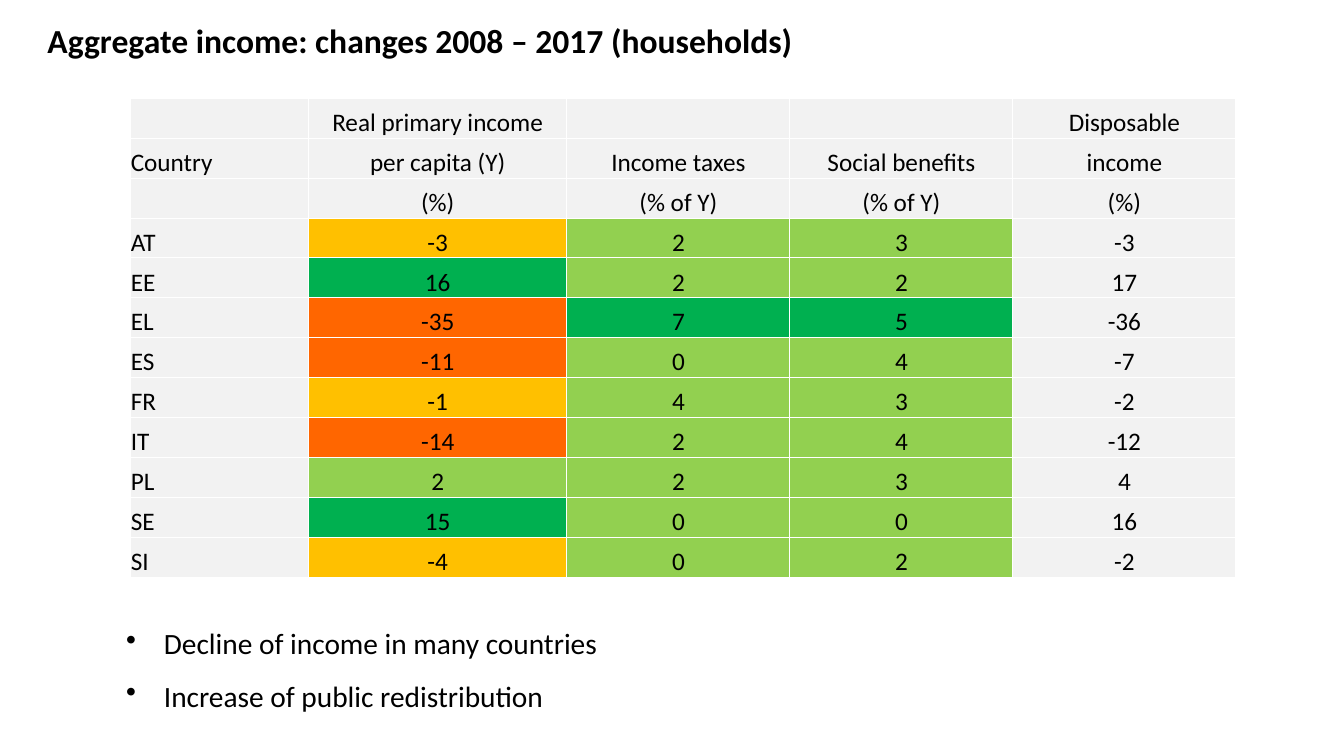
from lxml import etree
from pptx import Presentation
from pptx import util as u
from pptx.dml.color import RGBColor
from pptx.enum import text as t
from pptx.oxml import ns

TITLE = "Aggregate income: changes 2008 – 2017 (households)"
HEAD = [
    ("", "Real primary income", "", "", "Disposable"),
    ("Country", "per capita (Y)", "Income taxes", "Social benefits", "income"),
    ("", "(%)", "(% of Y)", "(% of Y)", "(%)"),
]
DATA = [
    ("AT", -3, 2, 3, -3),
    ("EE", 16, 2, 2, 17),
    ("EL", -35, 7, 5, -36),
    ("ES", -11, 0, 4, -7),
    ("FR", -1, 4, 3, -2),
    ("IT", -14, 2, 4, -12),
    ("PL", 2, 2, 3, 4),
    ("SE", 15, 0, 0, 16),
    ("SI", -4, 0, 2, -2),
]
POINTS = ["Decline of income in many countries", "Increase of public redistribution"]
WIDTHS = [2.36, 3.42, 2.95, 2.95, 2.95]
RATED = (1, 2, 3)
GREY = "F2F2F2"
# Upper limit of each band and its colour
BANDS = [(-10, "FF6600"), (0, "FFC000"), (5, "92D050"), (float("inf"), "00B050")]


def color(code):
    return RGBColor.from_string(code)


def shade(val):
    return next(code for top, code in BANDS if val < top)


def write(para, words, size=24, bold=False, align=t.PP_ALIGN.LEFT, space=1.0,
          left=0, first=0, bullet=None):
    """Fill a paragraph; left and first are its indents in inches."""
    para.text = words
    para.alignment = align
    para.line_spacing = space
    para.font.name = "Calibri"
    para.font.size = u.Pt(size)
    para.font.bold = bold
    para.font.color.rgb = color("000000")
    props = para._p.get_or_add_pPr()
    props.set("marL", str(u.Inches(left)))
    props.set("indent", str(u.Inches(first)))
    if bullet:
        mark = etree.Element(ns.qn("a:buChar"), char=bullet)
        props.find(ns.qn("a:defRPr")).addprevious(mark)


def frame(slide, left, top, wide, high, anchor=t.MSO_ANCHOR.TOP):
    box = slide.shapes.add_textbox(*map(u.Inches, (left, top, wide, high)))
    box.text_frame.word_wrap = True
    box.text_frame.vertical_anchor = anchor
    return box.text_frame


def edge(cell, code="FFFFFF", width=1):
    props = cell._tc.get_or_add_tcPr()
    for side in "LRTB":
        line = etree.SubElement(props, ns.qn(f"a:ln{side}"), w=str(u.Pt(width)))
        fill = etree.SubElement(line, ns.qn("a:solidFill"))
        etree.SubElement(fill, ns.qn("a:srgbClr"), val=code)


def grid(slide, left, top, high):
    rows = HEAD + DATA
    size = map(u.Inches, (left, top, sum(WIDTHS), high))
    table = slide.shapes.add_table(len(rows), len(WIDTHS), *size).table
    for col, wide in zip(table.columns, WIDTHS):
        col.width = u.Inches(wide)
    for r, row in enumerate(rows):
        for c, val in enumerate(row):
            cell = table.cell(r, c)
            cell.margin_left = cell.margin_right = cell.margin_top = u.Inches(0.01)
            cell.margin_bottom = 0
            cell.vertical_anchor = t.MSO_ANCHOR.BOTTOM
            edge(cell)
            rated = r >= len(HEAD) and c in RATED
            cell.fill.solid()
            cell.fill.fore_color.rgb = color(shade(val) if rated else GREY)
            write(cell.text_frame.paragraphs[0], str(val),
                  align=t.PP_ALIGN.CENTER if c else t.PP_ALIGN.LEFT)


def main():
    deck = Presentation()
    deck.slide_width, deck.slide_height = u.Inches(17.78), u.Inches(10)
    slide = deck.slides.add_slide(deck.slide_layouts[6])

    title = frame(slide, 0, 0, 17.78, 1.06, t.MSO_ANCHOR.MIDDLE)
    write(title.paragraphs[0], TITLE, size=32, bold=True, left=0.53)

    grid(slide, 1.72, 1.3, 6.34)

    notes = frame(slide, 1.57, 7.99, 14.65, 1.43)
    for i, words in enumerate(POINTS):
        para = notes.add_paragraph() if i else notes.paragraphs[0]
        write(para, words, size=28, space=1.5, left=0.5, first=-0.5, bullet="•")

    deck.save("out.pptx")


if __name__ == "__main__":
    main()
